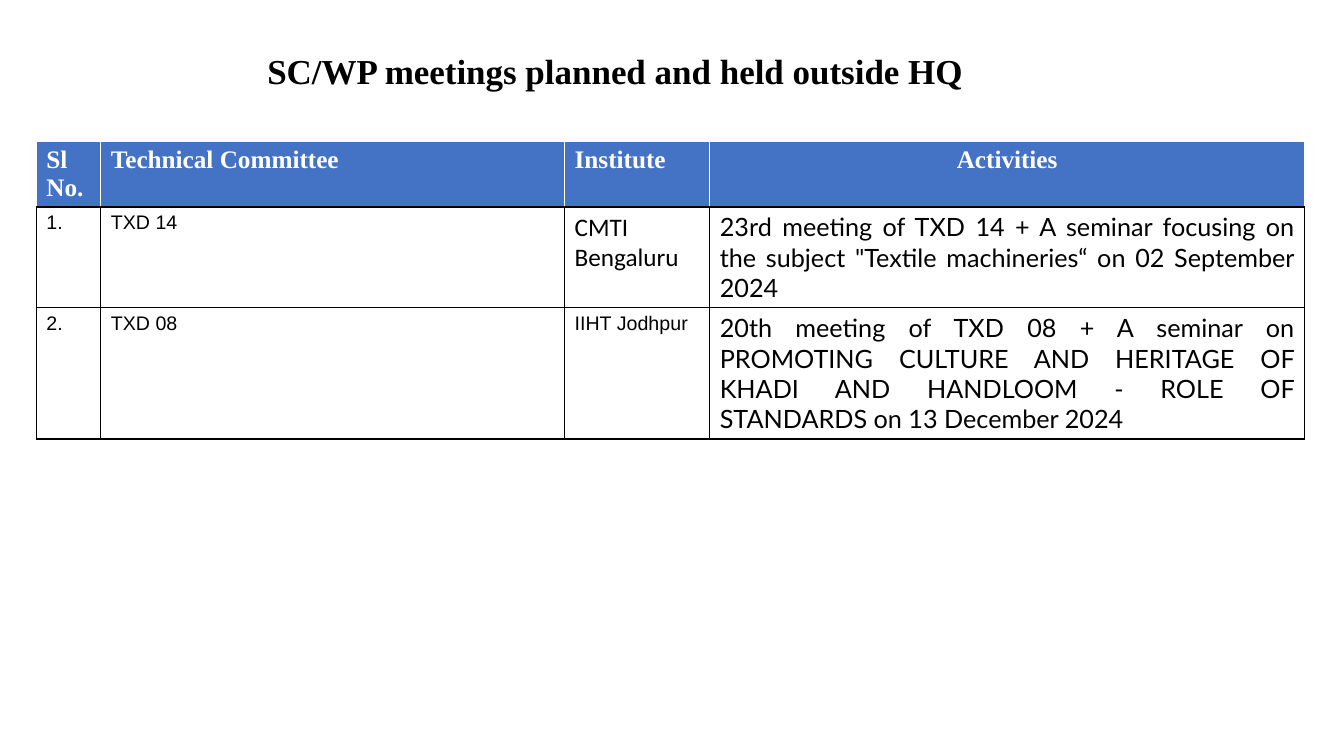
import pptx
import pptx.util
import pptx.dml.color
import pptx.enum.text
import pptx.oxml
import pptx.oxml.ns
import lxml.etree

Inches = pptx.util.Inches
Pt = pptx.util.Pt
RGB = pptx.dml.color.RGBColor
ALIGN = pptx.enum.text.PP_ALIGN
ANCHOR = pptx.enum.text.MSO_ANCHOR

BLACK = RGB(0x00, 0x00, 0x00)
WHITE = RGB(0xFF, 0xFF, 0xFF)
BLUE = RGB(0x44, 0x72, 0xC4)

TITLE = "SC/WP meetings planned and held outside HQ"
HEADS = ["Sl No.", "Technical Committee", "Institute", "Activities"]
MEETINGS = [
    ["1.", "TXD 14", "CMTI Bengaluru",
     "23rd meeting of TXD 14 + A seminar focusing on the subject "
     "\"Textile machineries“ on 02 September 2024"],
    ["2.", "TXD 08", "IIHT Jodhpur",
     "20th meeting of TXD 08 + A seminar on PROMOTING CULTURE AND HERITAGE OF "
     "KHADI AND HANDLOOM - ROLE OF STANDARDS on 13 December 2024"],
]
WIDTHS = [0.64, 4.6, 1.44, 5.9]
HEIGHTS = [0.56, 0.83, 0.83]


def write(frame, text, font, size, color, bold=False, align=ALIGN.LEFT):
    frame.text = text
    para = frame.paragraphs[0]
    para.alignment = align
    for run in para.runs:
        run.font.name = font
        run.font.size = Pt(size)
        run.font.bold = bold
        run.font.color.rgb = color
    return para


def border(cell, sides):
    """Draw 1 pt cell edges; sides maps L, R, T, B to colours."""
    props = cell._tc.get_or_add_tcPr()
    qn = pptx.oxml.ns.qn
    for side, color in sides.items():
        line = lxml.etree.SubElement(props, qn("a:ln" + side), w=str(Pt(1)))
        fill = lxml.etree.SubElement(line, qn("a:solidFill"))
        lxml.etree.SubElement(fill, qn("a:srgbClr"), val=str(color))


def add_title(slide):
    title = slide.shapes.title
    title.left, title.top = Inches(0.35), Inches(0)
    title.width, title.height = Inches(11.5), Inches(1.45)
    frame = title.text_frame
    frame.word_wrap = True
    frame.vertical_anchor = ANCHOR.MIDDLE
    para = write(frame, TITLE, "Times New Roman", 25, BLACK, True, ALIGN.CENTER)
    para.line_spacing = 0.9


def fill_head(cell, text, align):
    write(cell.text_frame, text, "Times New Roman", 18, WHITE, True, align)
    border(cell, {"L": WHITE, "R": WHITE, "T": WHITE, "B": BLACK})
    cell.fill.solid()
    cell.fill.fore_color.rgb = BLUE


def fill_body(cell, text, font, size, align):
    write(cell.text_frame, text, font, size, BLACK, align=align)
    border(cell, dict.fromkeys("LRTB", BLACK))
    cell.fill.background()


def add_table(slide):
    frame = slide.shapes.add_table(
        len(HEIGHTS), len(WIDTHS),
        Inches(0.36), Inches(1.4), Inches(12.58), Inches(2.84))
    table = frame.table
    for col, width in zip(table.columns, WIDTHS):
        col.width = Inches(width)
    for row, height in zip(table.rows, HEIGHTS):
        row.height = Inches(height)

    # Header row
    last = len(HEADS) - 1
    for c, text in enumerate(HEADS):
        align = ALIGN.CENTER if c == last else ALIGN.LEFT
        fill_head(table.cell(0, c), text, align)

    # Meeting rows
    for r, meeting in enumerate(MEETINGS, 1):
        for c, text in enumerate(meeting):
            font, size, align = "Arial", 14, ALIGN.LEFT
            if c == last:
                font, size, align = "Lato", 18, ALIGN.JUSTIFY
            elif text == "CMTI Bengaluru":
                font, size = "Calibri", 18
            fill_body(table.cell(r, c), text, font, size, align)


def main():
    deck = pptx.Presentation()
    deck.slide_width = Inches(13.33)
    deck.slide_height = Inches(7.5)
    slide = deck.slides.add_slide(deck.slide_layouts[5])
    add_title(slide)
    add_table(slide)
    deck.save("out.pptx")


if __name__ == "__main__":
    main()
